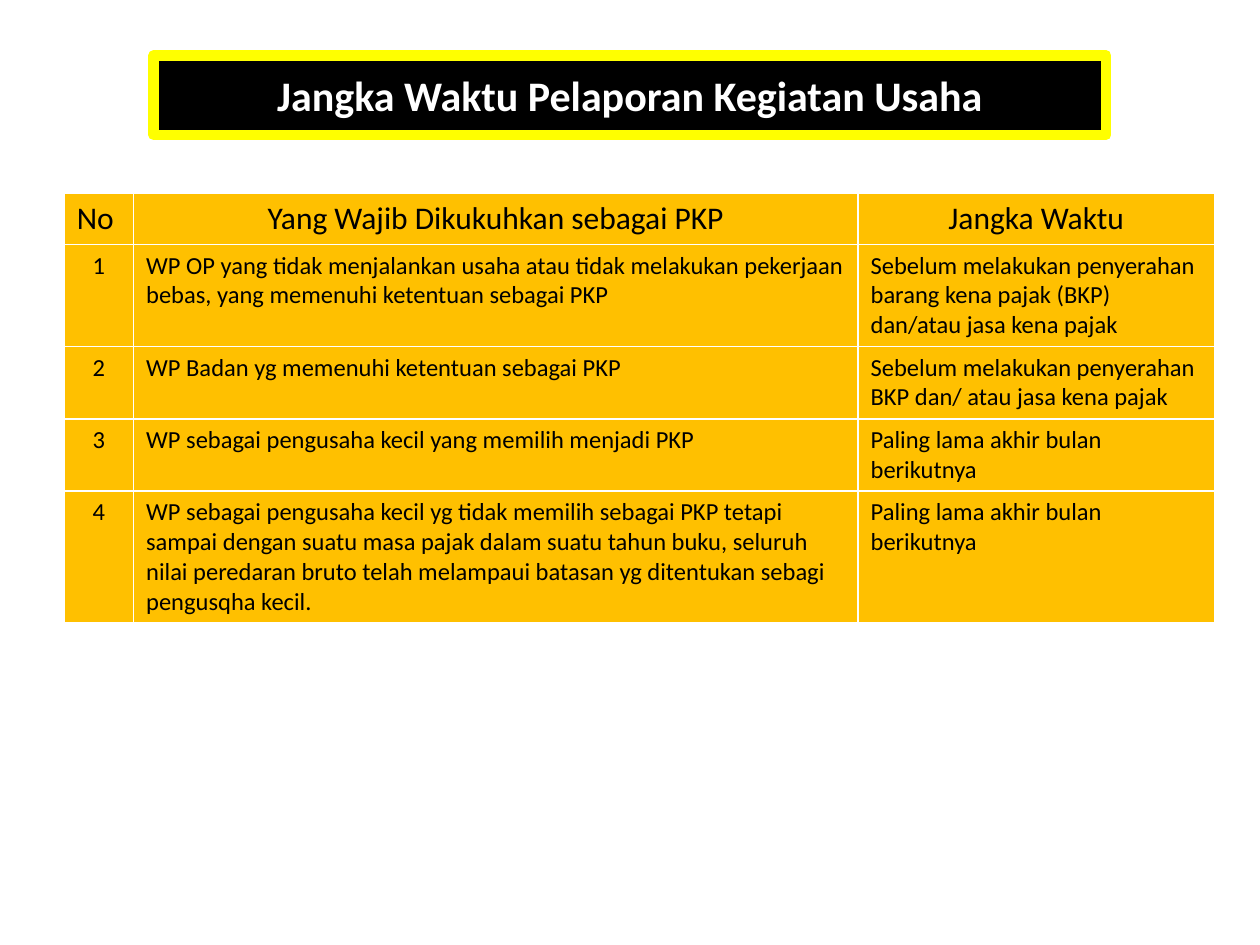
"""Build a slide with a pill-shaped title and a table of reporting deadlines."""
from lxml.etree import SubElement
from pptx import Presentation
from pptx.dml.color import RGBColor
from pptx.enum.text import MSO_ANCHOR, MSO_AUTO_SIZE, PP_ALIGN
from pptx.oxml.ns import qn
from pptx.util import Inches, Pt

COLORS = {"black": "000000", "yellow": "FFFF00", "white": "FFFFFF", "amber": "FFC000"}
TITLE_FONT = {"name": "Calibri", "size": Pt(24), "bold": True}
HEADER_FONT = {"name": "Calibri", "size": Pt(18), "bold": False}
BODY_FONT = {"name": "Calibri", "size": Pt(14), "bold": False}
TITLE_BOX = {"left": 1.22, "top": 0.44, "width": 7.56, "height": 0.63}
COLUMN_WIDTHS = [0.55, 5.75, 2.83]
ROW_HEIGHT = 0.41
HEADERS = ["No", "Yang Wajib Dikukuhkan sebagai PKP", "Jangka Waktu"]
DEADLINES = [
    ("WP OP yang tidak menjalankan usaha atau tidak melakukan pekerjaan bebas, "
     "yang memenuhi ketentuan sebagai PKP",
     "Sebelum melakukan penyerahan barang kena pajak (BKP) dan/atau jasa kena pajak"),
    ("WP Badan yg memenuhi ketentuan sebagai PKP",
     "Sebelum melakukan penyerahan BKP dan/ atau jasa kena pajak"),
    ("WP sebagai pengusaha kecil yang memilih menjadi PKP",
     "Paling lama akhir bulan berikutnya"),
    ("WP sebagai pengusaha kecil yg tidak memilih sebagai PKP tetapi sampai dengan "
     "suatu masa pajak dalam suatu tahun buku, seluruh nilai peredaran bruto telah "
     "melampaui batasan yg ditentukan sebagi pengusqha kecil.",
     "Paling lama akhir bulan berikutnya"),
]


def color(name):
    return RGBColor.from_string(COLORS[name])


def fill_solid(item, color_name):
    item.fill.solid()
    item.fill.fore_color.rgb = color(color_name)


def write_text(text_frame, text, font_format, color_name, alignment):
    paragraph = text_frame.paragraphs[0]
    paragraph.alignment = alignment
    run = paragraph.add_run()
    run.text = text
    for attribute, value in font_format.items():
        setattr(run.font, attribute, value)
    run.font.color.rgb = color(color_name)


def round_corners(shape):
    geometry = SubElement(shape.element.spPr, qn("a:prstGeom"), prst="roundRect")
    adjustments = SubElement(geometry, qn("a:avLst"))
    SubElement(adjustments, qn("a:gd"), name="adj", fmla="val 50000")


def format_title(shape, text):
    for attribute, value in TITLE_BOX.items():
        setattr(shape, attribute, Inches(value))
    round_corners(shape)
    fill_solid(shape, "black")
    shape.line.color.rgb = color("yellow")
    shape.line.width = Pt(6)
    frame_format = {"auto_size": MSO_AUTO_SIZE.NONE, "word_wrap": True,
                    "vertical_anchor": MSO_ANCHOR.MIDDLE}
    for attribute, value in frame_format.items():
        setattr(shape.text_frame, attribute, value)
    write_text(shape.text_frame, text, TITLE_FONT, "white", PP_ALIGN.CENTER)


def add_deadline_table(slide):
    rows = [HEADERS] + [(str(number), *texts) for number, texts in enumerate(DEADLINES, 1)]
    table = slide.shapes.add_table(
        len(rows), len(HEADERS), Inches(0.51), Inches(1.53),
        Inches(sum(COLUMN_WIDTHS)), Inches(ROW_HEIGHT * len(rows))).table
    for column, width in zip(table.columns, COLUMN_WIDTHS):
        column.width = Inches(width)
    for row_index, texts in enumerate(rows):
        is_header = row_index == 0
        for column_index, text in enumerate(texts):
            cell = table.cell(row_index, column_index)
            fill_solid(cell, "amber")
            centered = is_header != (column_index == 0)
            write_text(cell.text_frame, text, HEADER_FONT if is_header else BODY_FONT,
                       "black", PP_ALIGN.CENTER if centered else PP_ALIGN.LEFT)


def main():
    presentation = Presentation()
    presentation.slide_width = Inches(10)
    presentation.slide_height = Inches(7.5)
    slide = presentation.slides.add_slide(presentation.slide_layouts.get_by_name("Title Only"))
    format_title(slide.shapes.title, "Jangka Waktu Pelaporan Kegiatan Usaha")
    add_deadline_table(slide)
    presentation.save("out.pptx")


if __name__ == "__main__":
    main()
